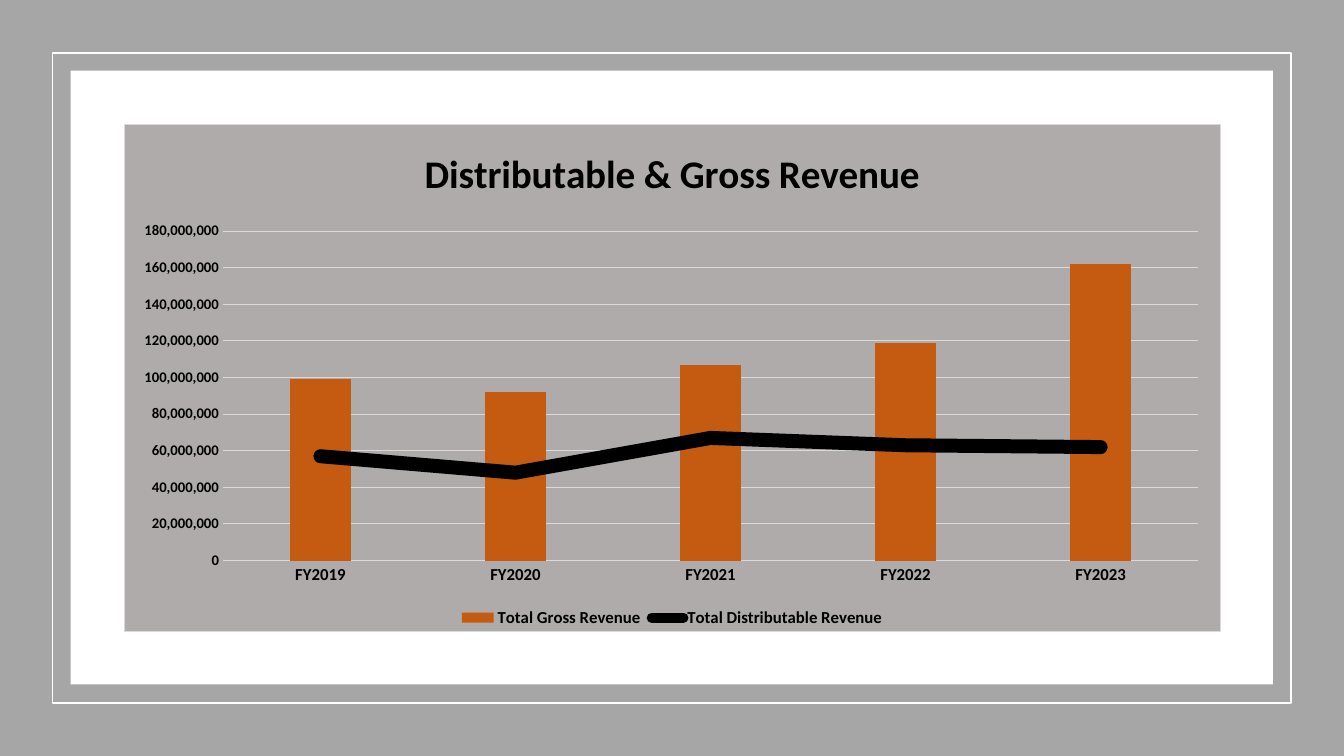
"""Build a framed slide with a combined column and line chart of revenue."""
from lxml import etree
from pptx import Presentation
from pptx.chart.data import CategoryChartData
from pptx.dml.color import RGBColor
from pptx.enum.chart import XL_CHART_TYPE, XL_LEGEND_POSITION, XL_MARKER_STYLE, XL_TICK_MARK
from pptx.enum.shapes import MSO_SHAPE
from pptx.oxml import parse_xml
from pptx.oxml.ns import nsdecls, qn
from pptx.util import Cm, Pt

COLUMNS = XL_CHART_TYPE.COLUMN_CLUSTERED
BOTTOM = XL_LEGEND_POSITION.BOTTOM
NO_MARKER = XL_MARKER_STYLE.NONE
NO_TICK = XL_TICK_MARK.NONE
RECTANGLE = MSO_SHAPE.RECTANGLE

COLORS = {
    "backdrop": "A6A6A6",
    "white": "FFFFFF",
    "panel": "AFABAB",
    "grid": "D9D9D9",
    "gross": "C55A11",
    "black": "000000",
}


def color(name):
    return RGBColor.from_string(COLORS[name])


def style_font(font, size, bold=True):
    values = {"name": "Calibri", "size": Pt(size), "bold": bold}
    for attribute, value in values.items():
        setattr(font, attribute, value)
    font.color.rgb = color("black")


presentation = Presentation()
presentation.slide_width = Cm(33.87)
presentation.slide_height = Cm(19.05)
slide = presentation.slides.add_slide(presentation.slide_layouts[6])

frames = [
    ((0, 0, 33.87, 19.05), "backdrop", None),
    ((1.32, 1.34, 31.22, 16.38), None, "white"),
    ((1.78, 1.78, 30.3, 15.47), "white", None),
]
for box, fill, outline in frames:
    frame = slide.shapes.add_shape(RECTANGLE, *map(Cm, box))
    frame.shadow.inherit = False
    if fill:
        frame.fill.solid()
        frame.fill.fore_color.rgb = color(fill)
    else:
        frame.fill.background()
    if outline:
        frame.line.color.rgb = color(outline)
        frame.line.width = Pt(1)
    else:
        frame.line.fill.background()

revenue = CategoryChartData(number_format="#,##0")
revenue.categories = [f"FY{year}" for year in range(2019, 2024)]
millions = {
    "Total Gross Revenue": (99, 92, 107, 119, 162),
    "Total Distributable Revenue": (57, 48, 67, 63, 62),
}
for name, amounts in millions.items():
    revenue.add_series(name, [amount * 1_000_000 for amount in amounts])
chart_box = map(Cm, (3.12, 3.13, 27.64, 12.8))
chart = slide.shapes.add_chart(COLUMNS, *chart_box, revenue).chart
style_font(chart.font, 10, False)

title = chart.chart_title.text_frame
title.text = "Distributable & Gross Revenue"
style_font(title.paragraphs[0].runs[0].font, 28)
chart.has_legend = True
chart.legend.position = BOTTOM
chart.legend.include_in_layout = False
style_font(chart.legend.font, 12)

for axis, size in ((chart.category_axis, 12), (chart.value_axis, 10.5)):
    axis.major_tick_mark = NO_TICK
    axis.minor_tick_mark = NO_TICK
    style_font(axis.tick_labels.font, size)
values_axis = chart.value_axis
values_axis.minimum_scale = 0
values_axis.maximum_scale = 180_000_000
values_axis.major_unit = 20_000_000
values_axis.tick_labels.number_format = "#,##0"
values_axis.tick_labels.number_format_is_linked = False
values_axis.format.line.fill.background()
for line in (chart.category_axis.format.line, values_axis.major_gridlines.format.line):
    line.color.rgb = color("grid")
    line.width = Pt(0.75)

columns = chart.plots[0]
columns.gap_width = 219
columns.overlap = -27
columns.vary_by_categories = False
gross, distributable = columns.series
gross.format.fill.solid()
gross.format.fill.fore_color.rgb = color("gross")

plot_area = chart.element.find(".//" + qn("c:plotArea"))
bar_chart = plot_area.find(qn("c:barChart"))
line_chart = parse_xml(
    f'<c:lineChart {nsdecls("c")}><c:grouping val="standard"/><c:varyColors val="0"/></c:lineChart>'
)
line_series = bar_chart.findall(qn("c:ser"))[1]
for bar_setting in line_series.findall(qn("c:invertIfNegative")):
    line_series.remove(bar_setting)
line_chart.append(line_series)
etree.SubElement(line_chart, qn("c:marker")).set("val", "1")
for axis_id in bar_chart.findall(qn("c:axId")):
    etree.SubElement(line_chart, qn("c:axId")).set("val", axis_id.get("val"))
bar_chart.addnext(line_chart)

distributable = chart.plots[1].series[0]
distributable.smooth = False
distributable.marker.style = NO_MARKER
distributable.format.line.color.rgb = color("black")
distributable.format.line.width = Pt(10)
stroke = line_series.find(qn("c:spPr")).find(qn("a:ln"))
stroke.set("cap", "rnd")
etree.SubElement(stroke, qn("a:round"))

for layout in plot_area.findall(qn("c:layout")):
    plot_area.remove(layout)
plot_area.insert(0, parse_xml(
    f'<c:layout {nsdecls("c")}><c:manualLayout><c:layoutTarget val="inner"/>'
    '<c:xMode val="edge"/><c:yMode val="edge"/><c:x val="0.09"/><c:y val="0.21"/>'
    '<c:w val="0.89"/><c:h val="0.65"/></c:manualLayout></c:layout>'
))
chart.element.find(qn("c:chart")).addnext(parse_xml(
    f'<c:spPr {nsdecls("c", "a")}>'
    f'<a:solidFill><a:srgbClr val="{COLORS["panel"]}"/></a:solidFill>'
    f'<a:ln w="{Pt(0.75)}"><a:solidFill><a:srgbClr val="{COLORS["grid"]}"/></a:solidFill></a:ln>'
    '</c:spPr>'
))

presentation.save("out.pptx")
